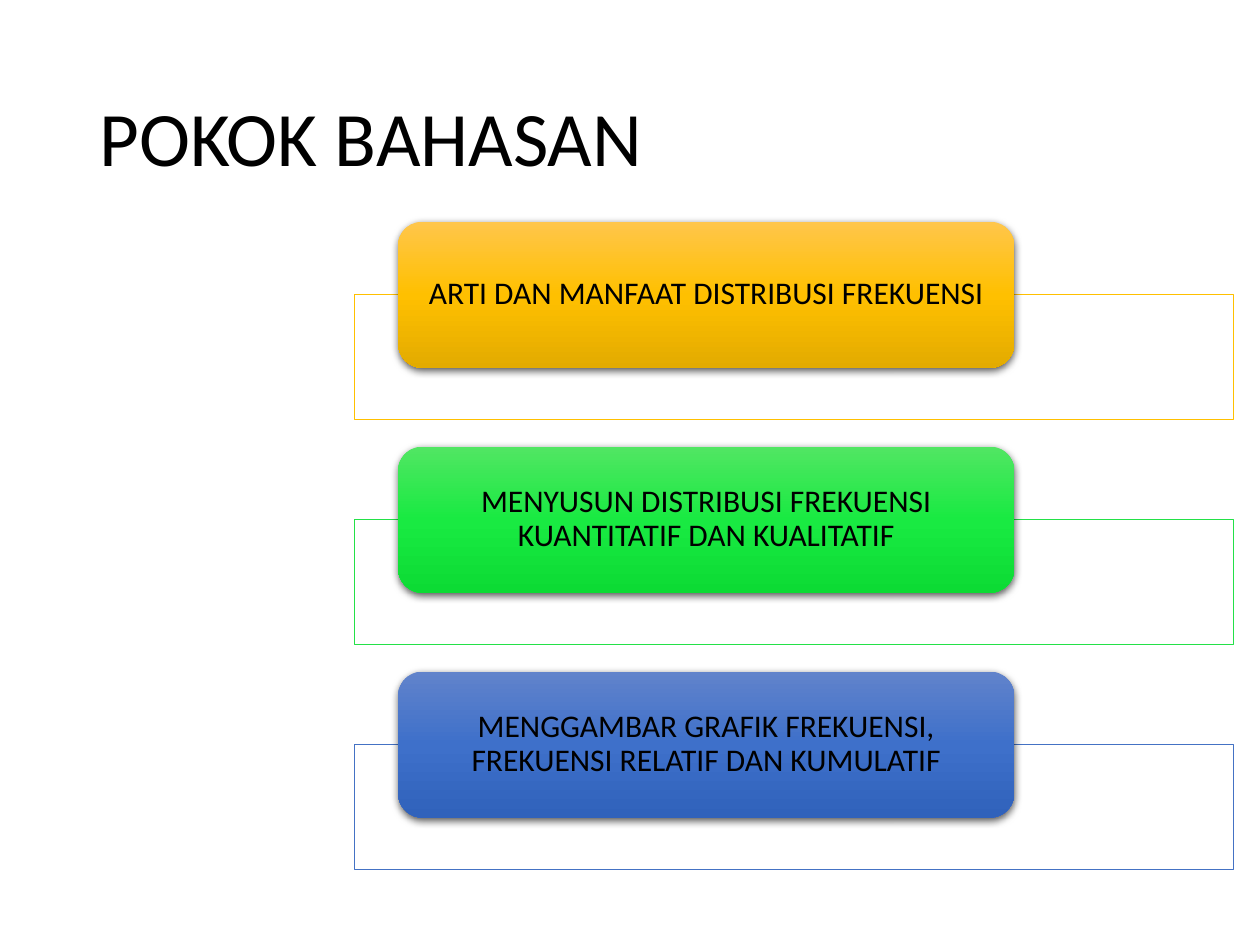
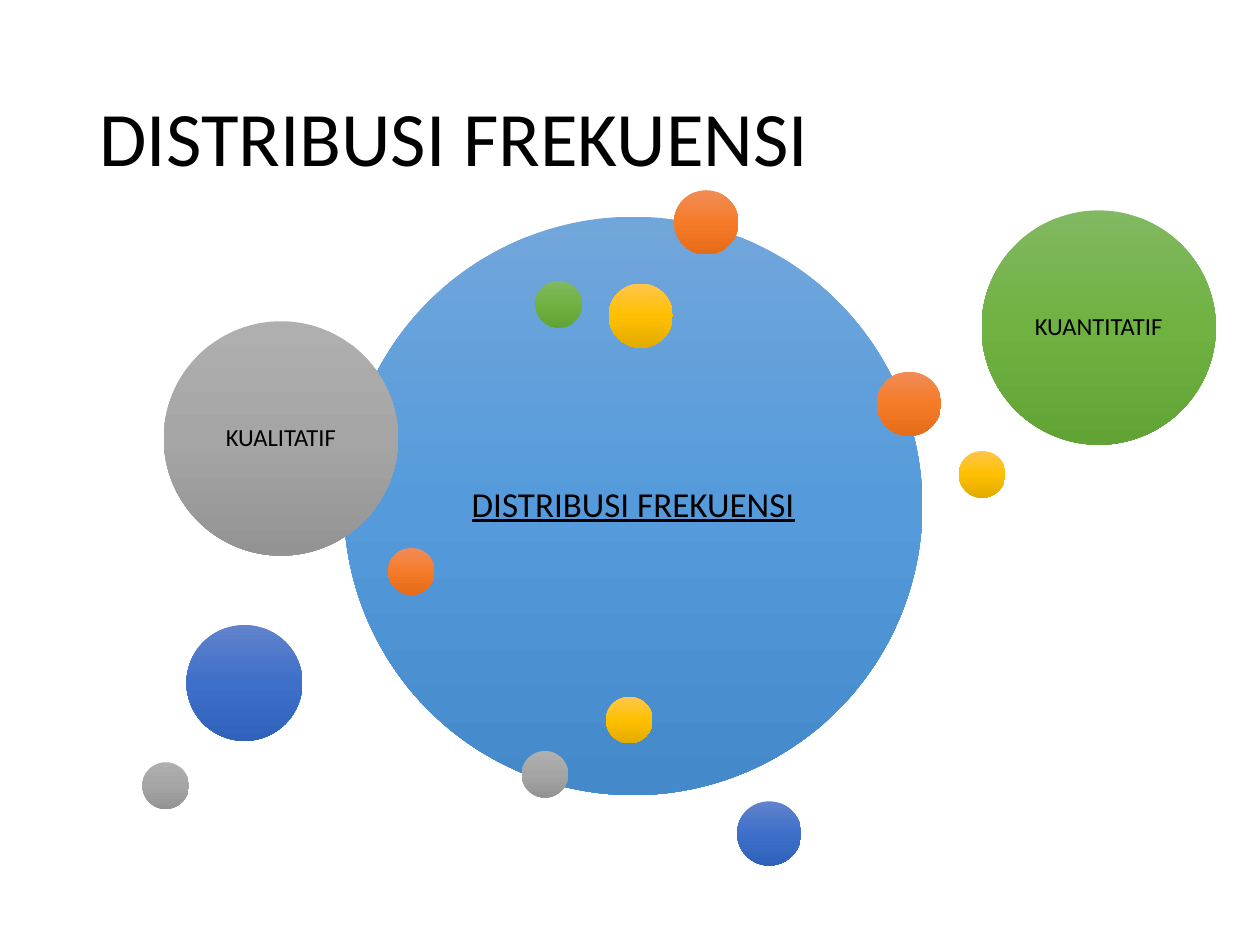
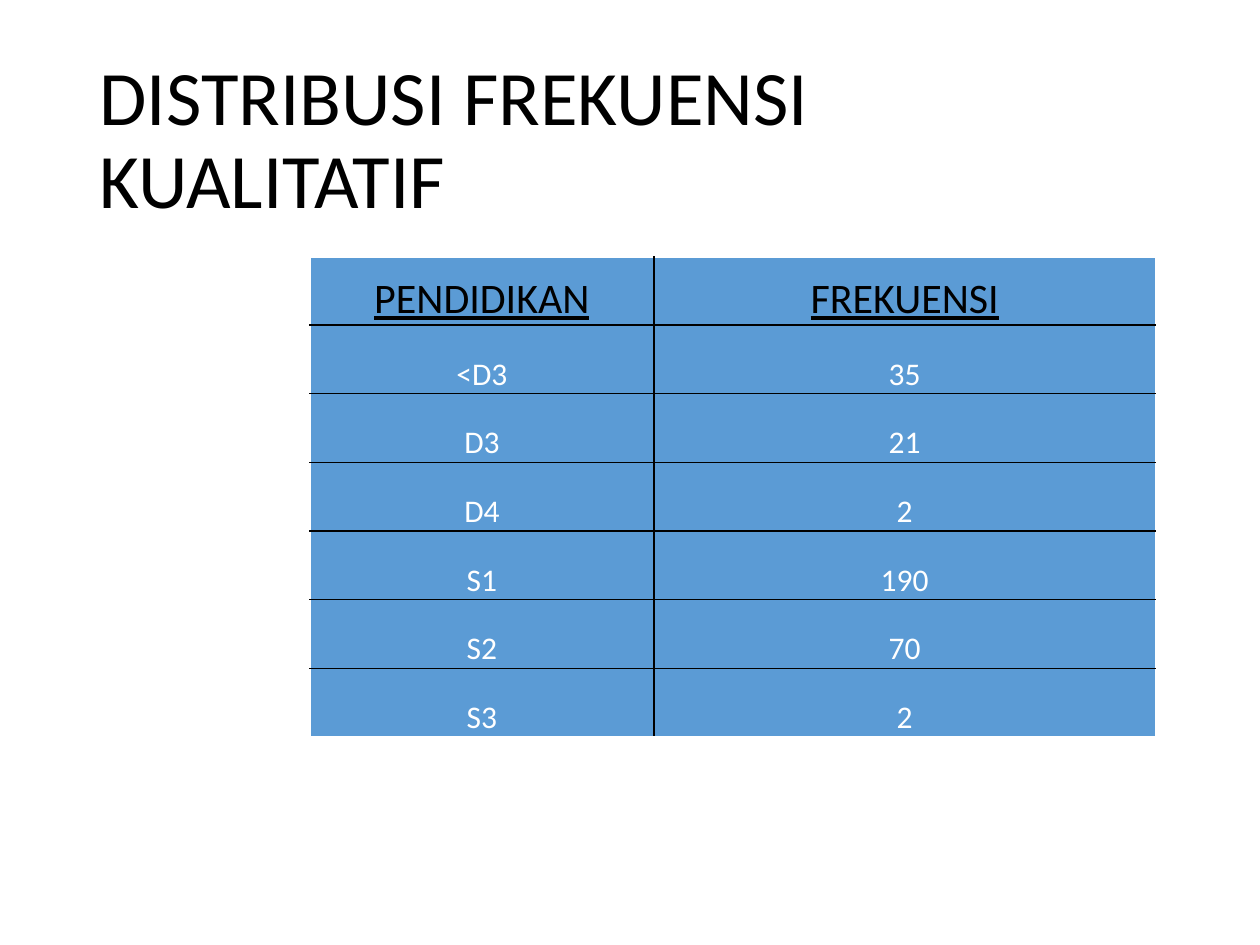
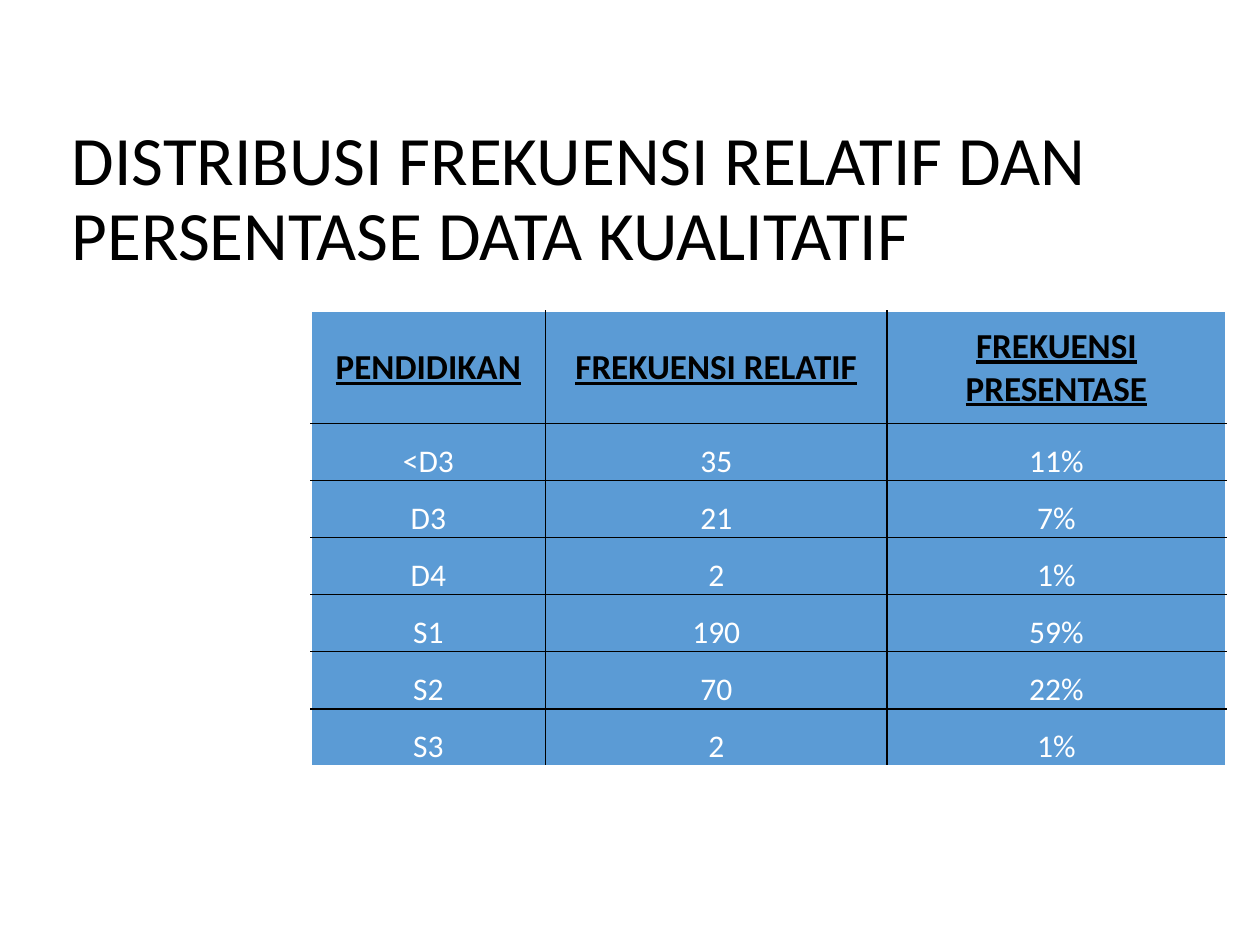
from collections import namedtuple
from copy import deepcopy
from dataclasses import dataclass

from lxml.etree import SubElement
from pptx import Presentation
from pptx.dml.color import RGBColor
from pptx.enum.shapes import MSO_SHAPE
from pptx.enum.text import MSO_ANCHOR, MSO_AUTO_SIZE, PP_ALIGN
from pptx.oxml.ns import qn
from pptx.util import Emu, Pt

EMU_PER_PX = 9144
TITLE_ONLY = 5

Box = namedtuple("Box", "left top width height")
Tone = namedtuple("Tone", "top middle bottom")


@dataclass(frozen=True)
class Theme:
    """Colours, font and type sizes of the presentation."""
    font: str = "Calibri"
    ink: str = "000000"
    paper: str = "FFFFFF"
    cell: str = "5B9BD5"
    blue: Tone = Tone("71A6DB", "559BDB", "448ACA")
    orange: Tone = Tone("F18C57", "F67B28", "E56C19")
    gray: Tone = Tone("AFAFAF", "A5A5A5", "939393")
    gold: Tone = Tone("FFC64B", "FFC000", "E3AB00")
    indigo: Tone = Tone("6183CB", "3E70CA", "3062BB")
    green: Tone = Tone("81B861", "6FB242", "62A336")
    lime: Tone = Tone("51E663", "19EA42", "0CDB34")
    title: float = 44
    small_title: float = 39.6
    header: float = 24
    small_header: float = 20
    hub: float = 20
    text: float = 18
    label: float = 14


THEME = Theme()
TITLE_BOX = Box(69, 40, 862, 145)

TOPICS = [
    ("ARTI DAN MANFAAT DISTRIBUSI FREKUENSI", THEME.gold, "FFC000"),
    ("MENYUSUN DISTRIBUSI FREKUENSI KUANTITATIF DAN KUALITATIF", THEME.lime, "23E148"),
    ("MENGGAMBAR GRAFIK FREKUENSI, FREKUENSI RELATIF DAN KUMULATIF", THEME.indigo, "4472C4"),
]

HUB, LARGE, MEDIUM, SMALL, TINY = 459, 186, 92, 51, 37
CIRCLES = [
    (160, 21, HUB, THEME.blue, "DISTRIBUSI FREKUENSI"),
    (422, 0, SMALL, THEME.orange, ""),
    (301, 445, TINY, THEME.gray, ""),
    (648, 207, TINY, THEME.gold, ""),
    (472, 485, SMALL, THEME.indigo, ""),
    (312, 72, TINY, THEME.green, ""),
    (195, 284, TINY, THEME.orange, ""),
    (17, 104, LARGE, THEME.gray, "KUALITATIF"),
    (370, 74, SMALL, THEME.gold, ""),
    (35, 345, MEDIUM, THEME.indigo, ""),
    (666, 16, LARGE, THEME.green, "KUANTITATIF"),
    (583, 144, SMALL, THEME.orange, ""),
    (0, 454, TINY, THEME.gray, ""),
    (368, 402, TINY, THEME.gold, ""),
]

EDUCATION = [
    ("<D3", "35", "11%"),
    ("D3", "21", "7%"),
    ("D4", "2", "1%"),
    ("S1", "190", "59%"),
    ("S2", "70", "22%"),
    ("S3", "2", "1%"),
]


def px(length):
    """Turn pixels into EMU."""
    return Emu(round(length * EMU_PER_PX))


def set_format(target, values):
    """Set each attribute named in a dict of format values."""
    for name, value in values.items():
        setattr(target, name, value)


def margins(left, top, right, bottom):
    """Return the four inner margins as format values."""
    return {"margin_left": px(left), "margin_top": px(top),
            "margin_right": px(right), "margin_bottom": px(bottom)}


def write_text(text_frame, text, size, color=THEME.ink, align=PP_ALIGN.CENTER,
               line_spacing=None, **font_values):
    """Write one formatted paragraph."""
    paragraph = text_frame.paragraphs[0]
    set_format(paragraph, {"alignment": align, "line_spacing": line_spacing})
    run = paragraph.add_run()
    run.text = text
    set_format(run.font, {"name": THEME.font, "size": Pt(size), **font_values})
    run.font.color.rgb = RGBColor.from_string(color)


def add_titled_slide(presentation, title, box=TITLE_BOX, size=THEME.title):
    """Add a slide and place its title."""
    slide = presentation.slides.add_slide(presentation.slide_layouts[TITLE_ONLY])
    shape = slide.shapes.title
    set_format(shape, {name: px(value) for name, value in box._asdict().items()})
    set_format(shape.text_frame, {"vertical_anchor": MSO_ANCHOR.MIDDLE, "word_wrap": True,
                                  "auto_size": MSO_AUTO_SIZE.NONE})
    write_text(shape.text_frame, title, size, align=PP_ALIGN.LEFT, line_spacing=0.9)
    return slide


def add_plain_shape(slide, kind, box):
    """Add a preset shape without a shadow."""
    shape = slide.shapes.add_shape(kind, *map(px, box))
    shape.shadow.inherit = False
    return shape


def add_gradient_shape(slide, kind, box, tone):
    """Add a shape without outline, filled from top to bottom with a tone."""
    shape = add_plain_shape(slide, kind, box)
    shape.line.fill.background()
    shape.fill.gradient()
    shape.fill.gradient_angle = 270
    stop_list = shape.element.spPr.find(qn("a:gradFill")).find(qn("a:gsLst"))
    stop_list.append(deepcopy(stop_list[0]))
    for stop, color, position in zip(shape.fill.gradient_stops, tone, (0, 0.5, 1)):
        stop.color.rgb = RGBColor.from_string(color)
        stop.position = position
    return shape


def add_soft_shadow(shape):
    """Give a shape a soft shadow below it."""
    effects = shape.element.spPr.find(qn("a:effectLst"))
    shadow = SubElement(effects, qn("a:outerShdw"), blurRad=str(Pt(4.5)), dist=str(Pt(1.5)),
                        dir="5400000", algn="ctr", rotWithShape="0")
    color = SubElement(shadow, qn("a:srgbClr"), val=THEME.ink)
    SubElement(color, qn("a:alpha"), val="63000")


def add_topic(slide, box, text, tone, outline):
    """Add an outlined band with a raised card over its upper edge."""
    drop = 58
    band = add_plain_shape(slide, MSO_SHAPE.RECTANGLE,
                           Box(box.left, box.top + drop, box.width, box.height - drop))
    band.fill.solid()
    band.fill.fore_color.rgb = RGBColor.from_string(THEME.paper)
    SubElement(band.element.spPr.find(qn("a:solidFill"))[0], qn("a:alpha"), val="90000")
    band.line.color.rgb = RGBColor.from_string(outline)
    band.line.width = Pt(0.5)
    card = add_gradient_shape(slide, MSO_SHAPE.ROUNDED_RECTANGLE,
                              Box(box.left + 35, box.top, 489, 2 * drop), tone)
    add_soft_shadow(card)
    set_format(card.text_frame, {"word_wrap": True, **margins(17, 0, 17, 0)})
    write_text(card.text_frame, text, THEME.text, line_spacing=0.9)


def add_topic_list(slide, box, topics):
    """Spread the topics evenly down the box."""
    height = 157
    step = (box.height - height) / (len(topics) - 1)
    for index, topic in enumerate(topics):
        add_topic(slide, Box(box.left, box.top + index * step, box.width, height), *topic)


def add_circle_cluster(slide, box, circles):
    """Place the circles relative to the box."""
    for left, top, diameter, tone, text in circles:
        circle = add_gradient_shape(slide, MSO_SHAPE.OVAL,
                                    Box(box.left + left, box.top + top, diameter, diameter), tone)
        if text:
            is_hub = diameter == HUB
            inset = 8 if is_hub else 6
            set_format(circle.text_frame, {"word_wrap": True, **margins(*[inset] * 4)})
            write_text(circle.text_frame, text, THEME.hub if is_hub else THEME.label,
                       line_spacing=0.9, underline=is_hub)


def add_border(cell, side):
    """Draw a thin line on one side of a cell."""
    line = SubElement(cell._tc.get_or_add_tcPr(), qn(f"a:ln{side}"), w=str(Pt(1)))
    SubElement(SubElement(line, qn("a:solidFill")), qn("a:srgbClr"), val=THEME.ink)


def add_frequency_table(slide, box, column_widths, header_height, rows, header_anchor,
                        header_format):
    """Add a table with inner rules and an underlined header row."""
    row_count, column_count = len(rows), len(column_widths)
    table = slide.shapes.add_table(row_count, column_count, *map(px, box)).table
    for column, width in zip(table.columns, column_widths):
        column.width = px(width)
    body_height = (box.height - header_height) / (row_count - 1)
    body_format = {"size": THEME.text, "color": THEME.paper, "bold": False}
    for row_index, values in enumerate(rows):
        is_header = row_index == 0
        table.rows[row_index].height = px(header_height if is_header else body_height)
        for column_index, value in enumerate(values):
            cell = table.cell(row_index, column_index)
            anchor = header_anchor if is_header else MSO_ANCHOR.BOTTOM
            set_format(cell, {"vertical_anchor": anchor, **margins(1, 1, 1, 0)})
            sides = {"L": column_index > 0, "R": column_index < column_count - 1,
                     "T": row_index > 0, "B": row_index < row_count - 1}
            for side, is_inner in sides.items():
                if is_inner:
                    add_border(cell, side)
            cell.fill.solid()
            cell.fill.fore_color.rgb = RGBColor.from_string(THEME.cell)
            write_text(cell.text_frame, value, **(header_format if is_header else body_format))


def main():
    """Build and save the presentation."""
    presentation = Presentation()
    set_format(presentation, {"slide_width": px(1000), "slide_height": px(750)})

    slide = add_titled_slide(presentation, "POKOK BAHASAN")
    add_topic_list(slide, Box(281, 176, 698, 514), TOPICS)

    slide = add_titled_slide(presentation, "DISTRIBUSI FREKUENSI")
    add_circle_cluster(slide, Box(113, 151, 852, 536), CIRCLES)

    slide = add_titled_slide(presentation, "DISTRIBUSI FREKUENSI KUALITATIF")
    counts = [("PENDIDIKAN", "FREKUENSI")] + [row[:2] for row in EDUCATION]
    add_frequency_table(slide, Box(246, 204, 671, 381), (273, 398), 54, counts,
                        MSO_ANCHOR.BOTTOM,
                        {"size": THEME.header, "bold": False, "underline": True})

    slide = add_titled_slide(presentation,
                             "DISTRIBUSI FREKUENSI RELATIF DAN PERSENTASE DATA KUALITATIF",
                             Box(47, 122, 953, 74), THEME.small_title)
    shares = [("PENDIDIKAN", "FREKUENSI RELATIF", "FREKUENSI PRESENTASE")] + EDUCATION
    add_frequency_table(slide, Box(247, 247, 726, 361), (186, 271, 269), 89, shares,
                        MSO_ANCHOR.MIDDLE,
                        {"size": THEME.small_header, "bold": True, "underline": True})

    presentation.save("out.pptx")


if __name__ == "__main__":
    main()
